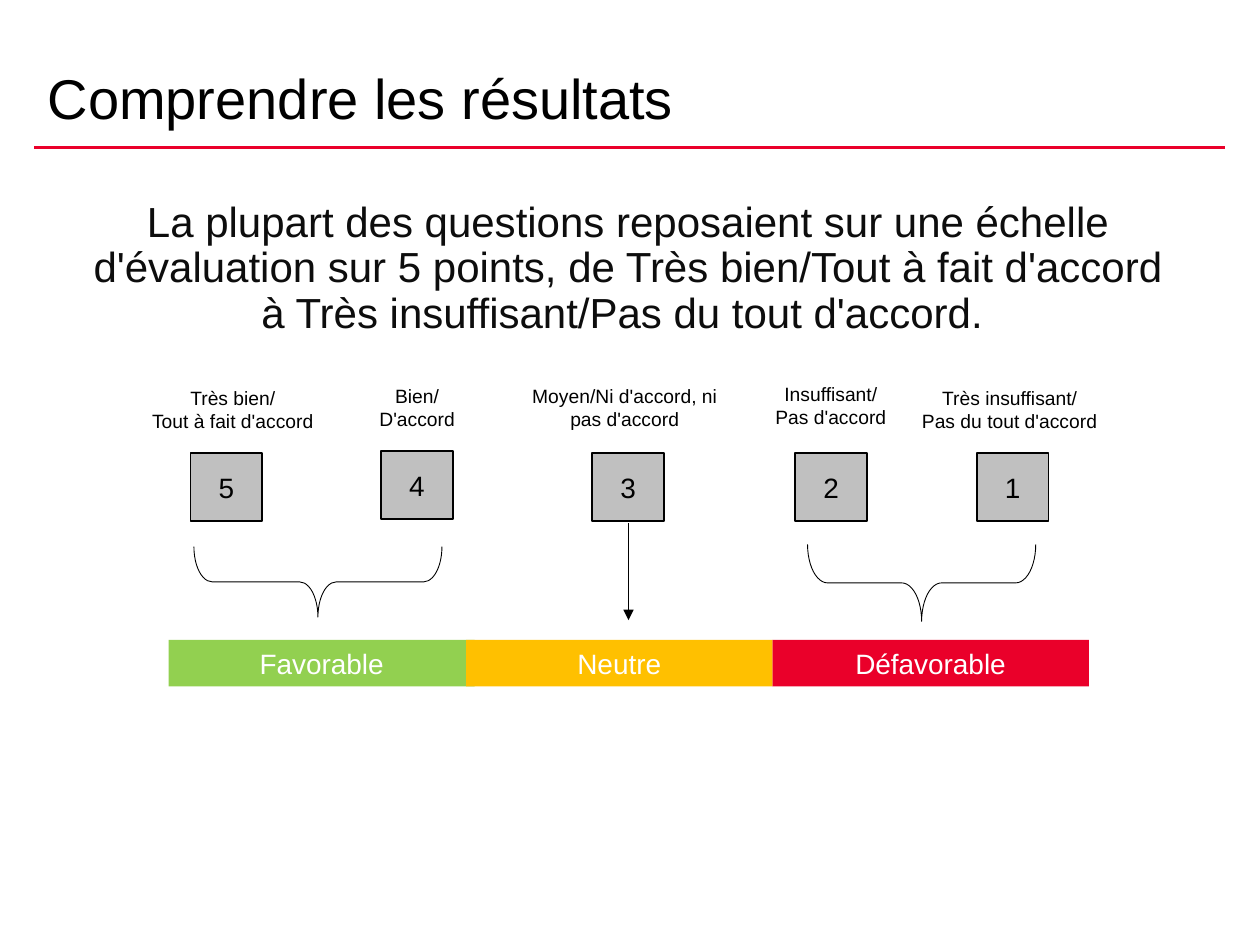
"""Build the slide that explains the five-point rating scale."""
import pptx
import pptx.util
from lxml import etree
from pptx.dml.color import RGBColor
from pptx.enum.shapes import MSO_CONNECTOR, MSO_SHAPE
from pptx.enum.text import MSO_ANCHOR, PP_ALIGN
from pptx.oxml.ns import qn
from pptx.util import Cm, Pt

BLACK = RGBColor(0x00, 0x00, 0x00)
WHITE = RGBColor(0xFF, 0xFF, 0xFF)
BODY = RGBColor(0x0D, 0x0D, 0x0D)
GRAY = RGBColor(0xC0, 0xC0, 0xC0)
RED = RGBColor(0xEA, 0x00, 0x2A)
GREEN = RGBColor(0x92, 0xD0, 0x50)
AMBER = RGBColor(0xFF, 0xC0, 0x00)

TITLE = "Comprendre les résultats"
INTRODUCTION = (
    "La plupart des questions reposaient sur une échelle d'évaluation sur 5 points, "
    "de Très bien/Tout à fait d'accord à Très insuffisant/Pas du tout d'accord. "
)
RATINGS = [
    ("5", 3.84, 9.14, "Très bien/\nTout à fait d'accord", 2.64, 7.65, 4.11),
    ("4", 7.68, 9.09, "Bien/\nD'accord", 7.04, 7.62, 2.74),
    ("3", 11.94, 9.14, "Moyen/Ni d'accord, ni pas d'accord", 10.31, 7.62, 4.57),
    ("2", 16.03, 9.14, "Insuffisant/\vPas d'accord", 15.34, 7.57, 2.82),
    ("1", 19.69, 9.14, "Très insuffisant/\vPas du tout d'accord", 18.21, 7.65, 4.29),
]
BANDS = [
    ("Favorable", 3.4, 6.17, GREEN),
    ("Défavorable", 15.57, 6.38, RED),
    ("Neutre", 9.4, 6.17, AMBER),
]
BRACES = [(6.41, 11.73, 5.0, 1.42), (18.58, 11.75, 4.6, 1.55)]
BOX_WIDTH, BOX_HEIGHT = 1.45, 1.37
LABEL_HEIGHT = 1.19
BAND_TOP, BAND_HEIGHT = 12.9, 0.94


def add_text(slide, text, left, top, width, height, size=11, color=BLACK, fill=None,
             line=None, align=PP_ALIGN.CENTER, anchor=MSO_ANCHOR.TOP, spacing=None,
             inset=(0.25, 0.13), wrap=True):
    """Add text in a plain box, or in a rectangle when a fill is given."""
    frame = Cm(left), Cm(top), Cm(width), Cm(height)
    if fill is None:
        shape = slide.shapes.add_textbox(*frame)
    else:
        shape = slide.shapes.add_shape(MSO_SHAPE.RECTANGLE, *frame)
        shape.shadow.inherit = False
        shape.fill.solid()
        shape.fill.fore_color.rgb = fill
        if line is None:
            shape.line.fill.background()
        else:
            shape.line.color.rgb = line
            shape.line.width = Pt(1)
    text_frame = shape.text_frame
    text_frame.word_wrap = wrap
    text_frame.vertical_anchor = anchor
    text_frame.margin_left = text_frame.margin_right = Cm(inset[0])
    text_frame.margin_top = text_frame.margin_bottom = Cm(inset[1])
    text_frame.text = text
    for paragraph in text_frame.paragraphs:
        paragraph.alignment = align
        paragraph.line_spacing = spacing
        paragraph.font.name = "Arial"
        paragraph.font.size = Pt(size)
        paragraph.font.color.rgb = color


def add_line(slide, start, end, color, width, arrow=False):
    """Add a straight line, with an arrowhead at its end on request."""
    connector = slide.shapes.add_connector(
        MSO_CONNECTOR.STRAIGHT, *(Cm(value) for value in start + end))
    connector.line.color.rgb = color
    connector.line.width = Pt(width)
    if arrow:
        properties = connector.line._get_or_add_ln()
        etree.SubElement(properties, qn("a:tailEnd"), type="triangle")
    etree.SubElement(connector._element.spPr, qn("a:effectLst"))


def add_brace(slide, center_x, center_y, span, depth):
    """Add a brace that opens upwards around its centre."""
    brace = slide.shapes.add_shape(
        MSO_SHAPE.LEFT_BRACE, Cm(center_x - depth / 2), Cm(center_y - span / 2),
        Cm(depth), Cm(span))
    brace.rotation = 270
    brace.adjustments[0] = 0.26
    brace.adjustments[1] = 0.5
    brace.shadow.inherit = False
    brace.fill.background()
    brace.line.color.rgb = BLACK
    brace.line.width = Pt(0.5)


def main():
    """Put the slide together and save it."""
    presentation = pptx.Presentation()
    presentation.slide_width, presentation.slide_height = Cm(25.4), Cm(19.05)
    slide = presentation.slides.add_slide(presentation.slide_layouts[6])

    add_line(slide, (0.69, 2.97), (24.69, 2.97), RED, 2)
    add_text(slide, TITLE, 0.71, 0.13, 22.86, 2.62, size=32, align=PP_ALIGN.LEFT,
             anchor=MSO_ANCHOR.BOTTOM, spacing=0.8)
    add_line(slide, (12.67, 10.54), (12.67, 12.5), BLACK, 1, arrow=True)
    for score, left, top, label, label_left, label_top, label_width in RATINGS:
        add_text(slide, score, left, top, BOX_WIDTH, BOX_HEIGHT, size=16, fill=GRAY,
                 line=BLACK, anchor=MSO_ANCHOR.MIDDLE, wrap=False)
        add_text(slide, label, label_left, label_top, label_width, LABEL_HEIGHT)
    for name, left, width, color in BANDS:
        add_text(slide, name, left, BAND_TOP, width, BAND_HEIGHT, size=16, color=WHITE,
                 fill=color, anchor=MSO_ANCHOR.MIDDLE)
    for brace in BRACES:
        add_brace(slide, *brace)
    add_text(slide, INTRODUCTION, 1.47, 3.89, 22.38, 3.25, size=24, color=BODY,
             spacing=Pt(26), inset=(0.28, 0.15))

    presentation.save("out.pptx")


if __name__ == "__main__":
    main()
